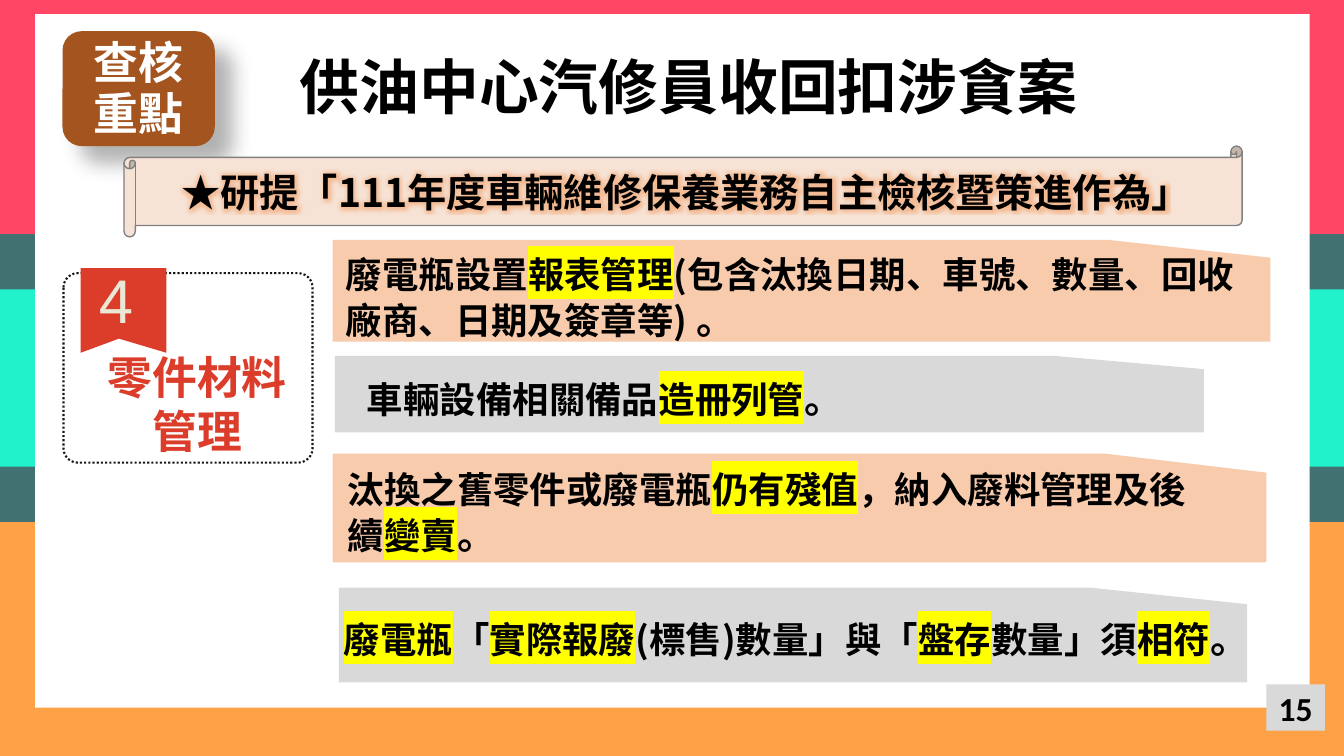
from dataclasses import dataclass

from lxml import etree
from pptx import Presentation
from pptx.dml.color import RGBColor
from pptx.enum.dml import MSO_LINE
from pptx.enum.shapes import MSO_SHAPE
from pptx.enum.text import MSO_ANCHOR, MSO_AUTO_SIZE, PP_ALIGN
from pptx.oxml.ns import qn
from pptx.util import Inches, Pt

RECT, ROUND = MSO_SHAPE.RECTANGLE, MSO_SHAPE.ROUNDED_RECTANGLE
SCROLL = MSO_SHAPE.HORIZONTAL_SCROLL
LEFT, CENTER = PP_ALIGN.LEFT, PP_ALIGN.CENTER
TOP, MIDDLE = MSO_ANCHOR.TOP, MSO_ANCHOR.MIDDLE
NO_FIT, GROW = MSO_AUTO_SIZE.NONE, MSO_AUTO_SIZE.SHAPE_TO_FIT_TEXT
DOTS = MSO_LINE.ROUND_DOT


@dataclass(frozen=True)
class Theme:
    font: str = "Noto Sans CJK SC"
    latin: str = "Arial"
    digit: str = "Calibri"
    ink: str = "000000"
    paper: str = "FFFFFF"
    slate: str = "427172"
    mint: str = "22F2CC"
    rose: str = "FF4664"
    amber: str = "FFA146"
    brown: str = "A3541F"
    cream: str = "F7E3D5"
    edge: str = "808080"
    dots: str = "181715"
    red: str = "DC3D2A"
    bone: str = "EAE7D4"
    peach: str = "F8CBAD"
    gray: str = "D9D9D9"
    mark: str = "FFFF00"
    glow: str = "ED7D31"
    title: float = 42.7
    count: int = 44
    head: int = 32
    lead: int = 28
    body: int = 26
    page: int = 24


T = Theme()


# Shared helpers
def color(node, rgb, alpha=100):
    clr = etree.SubElement(node, qn("a:srgbClr"), val=rgb)
    if alpha < 100:
        etree.SubElement(clr, qn("a:alpha"), val=str(alpha * 1000))


def paint(shape, fill=None):
    shape.shadow.inherit = False
    shape.line.fill.background()
    if fill:
        shape.fill.solid()
        shape.fill.fore_color.rgb = RGBColor.from_string(fill)
    else:
        shape.fill.background()
    return shape


def stroke(shape, rgb, width):
    shape.line.color.rgb = RGBColor.from_string(rgb)
    shape.line.width = Pt(width)


def block(slide, kind, box, fill=None):
    return paint(slide.shapes.add_shape(kind, *map(Inches, box)), fill)


def outline(slide, points, fill):
    spots = [(Inches(x), Inches(y)) for x, y in points]
    form = slide.shapes.build_freeform(*spots[0])
    form.add_line_segments(spots[1:], close=True)
    return paint(form.convert_to_shape(), fill)


def setup(shape, align=CENTER, anchor=MIDDLE, inset=(0.1, 0.05), fit=NO_FIT, wrap=True):
    frame = shape.text_frame
    frame.word_wrap, frame.auto_size = wrap, fit
    frame.vertical_anchor = anchor
    frame.margin_left = frame.margin_right = Inches(inset[0])
    frame.margin_top = frame.margin_bottom = Inches(inset[1])
    para = frame.paragraphs[0]
    para.alignment = align
    return para


def label(slide, box, align=CENTER, wrap=True):
    shape = slide.shapes.add_textbox(*map(Inches, box))
    return setup(shape, align, TOP, (0.13, 0.07), GROW, wrap)


def write(para, text, size, ink=T.ink, face=T.font, bold=True, mark=None, glow=None):
    run = para.add_run()
    run.text = text
    font = run.font
    font.size, font.bold = Pt(size), bold
    font.color.rgb = RGBColor.from_string(ink)
    props = font._element
    if glow:
        effects = etree.SubElement(props, qn("a:effectLst"))
        halo = etree.SubElement(effects, qn("a:glow"), rad=str(Pt(8)))
        color(halo, glow, 40)
    if mark:
        color(etree.SubElement(props, qn("a:highlight")), mark)
    font.name = face
    etree.SubElement(props, qn("a:ea"), typeface=face)


# Coloured bands behind a white sheet
def backdrop(slide, box):
    x, y, w, h = box
    bands = ((0, h, T.slate), (2.87, 1.76, T.mint),
             (0, 2.32, T.rose), (h - 2.32, 2.32, T.amber))
    for top, tall, fill in bands:
        block(slide, RECT, (x, y + top, w, tall), fill)
    block(slide, RECT, (x + 0.35, y + 0.14, w - 0.69, h - 0.62), T.paper)


def number(slide, box):
    para = setup(block(slide, RECT, box, T.gray))
    write(para, "15", T.page, face=T.digit)


def badge(slide, box):
    shape = block(slide, ROUND, box, T.brown)
    effects = shape._element.spPr.find(qn("a:effectLst"))
    shade = etree.SubElement(effects, qn("a:outerShdw"), blurRad=str(Pt(15)),
                             dist=str(Pt(18)), dir=str(45 * 60000), algn="tl", rotWithShape="0")
    color(shade, T.ink, 30)
    para = setup(shape)
    para.line_spacing = Pt(36)
    write(para, "查核重點", T.head, T.paper)


def heading(slide, box):
    title = slide.shapes.title
    title.left, title.top, title.width, title.height = map(Inches, box)
    slide.shapes.element.append(title.element)  # bring above the bands
    para = setup(title, anchor=TOP, inset=(0.13, 0.13))
    para.line_spacing = Pt(20)
    write(para, "供油中心汽修員收回扣涉貪案", T.title)


def banner(slide, box):
    shape = block(slide, SCROLL, box, T.cream)
    stroke(shape, T.edge, 1)
    write(setup(shape), "★研提「111年度車輛維修保養業務自主檢核暨策進作為」",
          T.lead, glow=T.glow)


# Dotted topic frame with a numbered ribbon
def topic(slide, box):
    x, y, w, h = box
    write(label(slide, (x + 0.17, y + 0.69, 2.31, 1.31)), "零件材料管理", T.head, T.red)
    frame = block(slide, ROUND, box)
    frame.adjustments[0] = 0.075
    stroke(frame, T.dots, 1.5)
    frame.line.dash_style = DOTS
    left, top, wide, tall = x + 0.17, y - 0.05, 0.85, 0.84
    outline(slide, [(left, top), (left + wide, top), (left + wide, top + tall),
                    (left + 0.38, top + tall - 0.14), (left, top + tall)], T.red)
    para = label(slide, (x + 0.22, y - 0.18, 0.59, 0.76), LEFT, wrap=False)
    write(para, "4", T.count, T.bone, T.latin, False)


# Card with a sloped corner; text between bars is highlighted
def card(slide, box, fill, area, text, stop="。", align=LEFT):
    x, y, w, h = box
    outline(slide, [(x, y), (x + 0.827 * w, y), (x + w, y + 0.175 * h),
                    (x + w, y + h), (x, y + h)], fill)
    dx, dy, wide, tall = area
    para = label(slide, (x + dx, y + dy, wide, tall), align)
    for i, part in enumerate(text.split("|")):
        if part:
            write(para, part, T.body, mark=T.mark if i % 2 else None)
    write(para, stop, T.lead)


def main():
    deck = Presentation()
    deck.slide_width, deck.slide_height = Inches(13.33), Inches(7.5)
    slide = deck.slides.add_slide(deck.slide_layouts[5])
    backdrop(slide, (0, 0, 13.33, 7.5))
    number(slide, (12.56, 6.79, 0.58, 0.46))
    badge(slide, (0.62, 0.31, 1.51, 1.14))
    banner(slide, (1.23, 1.45, 11.09, 0.9))
    topic(slide, (0.63, 2.71, 2.47, 1.88))
    card(slide, (3.3, 2.38, 9.3, 1.01), T.peach, (0, 0.05, 9.2, 1.04),
         "廢電瓶設置|報表管理|(包含汰換日期、車號、數量、回收廠商、日期及簽章等)", " 。")
    card(slide, (3.32, 3.53, 8.62, 0.76), T.gray, (0.12, 0.11, 4.74, 0.61),
         "車輛設備相關備品|造冊列管|", align=CENTER)
    card(slide, (3.3, 4.5, 9.26, 1.08), T.peach, (0.02, 0.06, 8.78, 1.04),
         "汰換之舊零件或廢電瓶|仍有殘值|，納入廢料管理及後續|變賣|")
    card(slide, (3.36, 5.83, 9.01, 0.94), T.gray, (-0.08, 0.19, 8.96, 0.61),
         "|廢電瓶|「|實際報廢|(標售)數量」與「|盤存|數量」須|相符|")
    heading(slide, (2.49, 0.8, 8.68, 0.52))
    deck.save("out.pptx")


if __name__ == "__main__":
    main()
